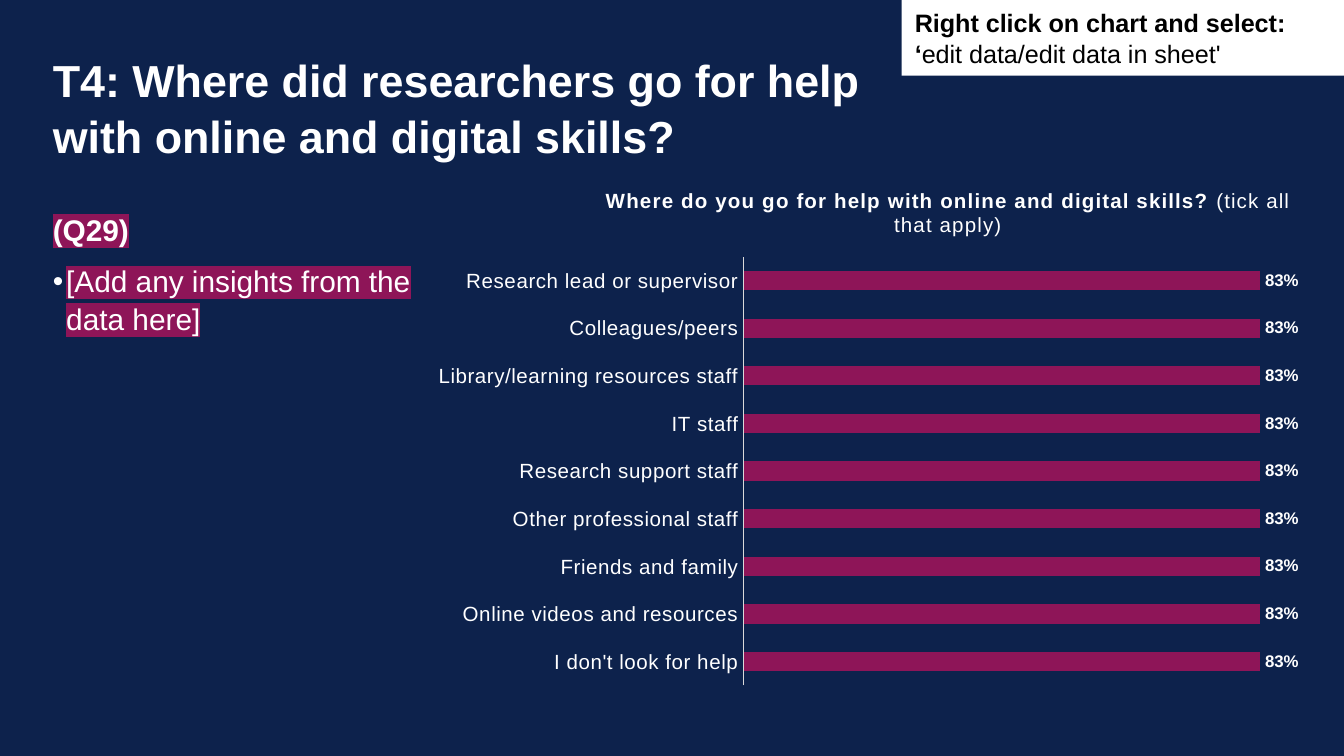
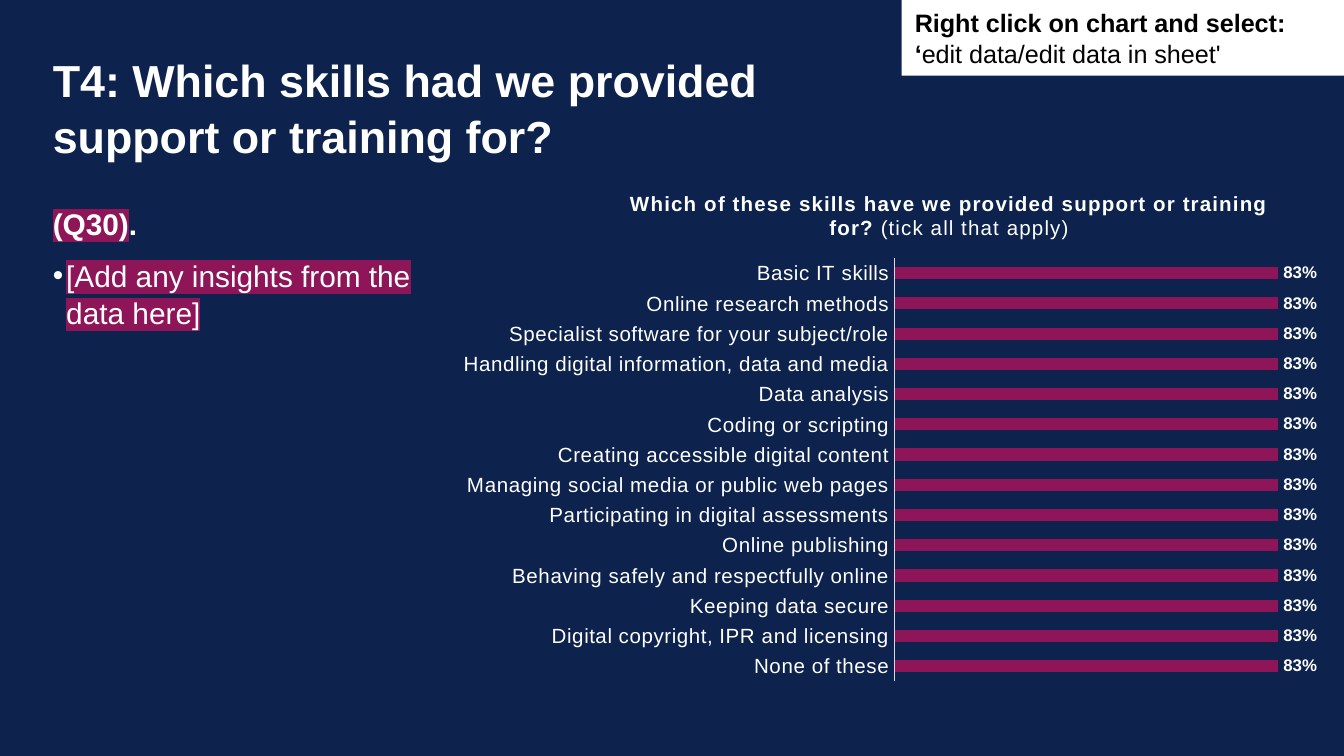
from dataclasses import dataclass

from lxml import etree
from pptx import Presentation
from pptx.chart.chart import Chart
from pptx.chart.data import CategoryChartData
from pptx.dml.color import RGBColor
from pptx.enum.chart import XL_CHART_TYPE, XL_LABEL_POSITION, XL_TICK_MARK
from pptx.enum.shapes import MSO_SHAPE
from pptx.enum.text import MSO_ANCHOR, MSO_AUTO_SIZE, PP_ALIGN
from pptx.oxml.ns import qn
from pptx.slide import Slide
from pptx.text.text import Font, TextFrame
from pptx.util import Pt

BAR = XL_CHART_TYPE.BAR_CLUSTERED
OUTSIDE = XL_LABEL_POSITION.OUTSIDE_END
NO_TICK = XL_TICK_MARK.NONE
RECT = MSO_SHAPE.RECTANGLE
TOP, MIDDLE = MSO_ANCHOR.TOP, MSO_ANCHOR.MIDDLE
LEFT = PP_ALIGN.LEFT
NO_FIT = MSO_AUTO_SIZE.NONE


@dataclass(frozen=True)
class Theme:
    font: str = "Arial"
    navy: RGBColor = RGBColor(0x0D, 0x22, 0x4C)
    plum: RGBColor = RGBColor(0x8E, 0x15, 0x58)
    white: RGBColor = RGBColor(0xFF, 0xFF, 0xFF)
    black: RGBColor = RGBColor(0x00, 0x00, 0x00)
    axis: RGBColor = RGBColor(0xD9, 0xD9, 0xD9)
    title: float = 24
    body: float = 16
    note: float = 13.5
    chart: float = 10
    chart_title: float = 11
    category: float = 11
    label: float = 9
    line_spacing: float = 1.05


@dataclass(frozen=True)
class Box:
    left: float
    top: float
    width: float
    height: float


@dataclass(frozen=True)
class Span:
    text: str
    bold: bool = False
    marked: bool = False


@dataclass(frozen=True)
class Question:
    title: list[str]
    title_box: Box
    heading: list[Span]
    body_box: Box
    chart_title: str
    chart_box: Box
    plot_area: Box
    categories: list[str]


T = Theme()
SLIDE_W, SLIDE_H = 720, 405
SHARE = 0.83
AXIS_MAX = 0.9
BULLET_INDENT = 7.2
NOTE_BOX = Box(483, 0, 237, 40.5)
NOTE = [
    Span("Right click on chart and select: ‘", bold=True),
    Span("edit data/edit data in sheet'"),
]
INSIGHTS = [Span("[Add any insights from the data here]", marked=True)]

QUESTIONS = [
    Question(
        title=["T4: Where did researchers go for help with online and digital skills?"],
        title_box=Box(28.3, 26.6, 442, 26.6),
        heading=[Span("(Q29)", True, True)],
        body_box=Box(28.3, 112.3, 203.8, 237.6),
        chart_title="Where do you go for help with online and digital skills?",
        chart_box=Box(231.8, 89.3, 476, 283.7),
        plot_area=Box(0.35, 0.17, 0.63, 0.81),
        categories=[
            "Research lead or supervisor",
            "Colleagues/peers",
            "Library/learning resources staff",
            "IT staff",
            "Research support staff",
            "Other professional staff",
            "Friends and family",
            "Online videos and resources",
            "I don't look for help",
        ],
    ),
    Question(
        title=["T4: Which skills had we provided", "support or training for?"],
        title_box=Box(28.3, 26.6, 513.4, 26.6),
        heading=[Span("(Q30)", True, True), Span(".", True)],
        body_box=Box(28.3, 109.4, 201.6, 237.6),
        chart_title="Which of these skills have we provided support or training for?",
        chart_box=Box(247, 90.7, 464.4, 280),
        plot_area=Box(0.5, 0.17, 0.48, 0.81),
        categories=[
            "Basic IT skills",
            "Online research methods",
            "Specialist software for your subject/role",
            "Handling digital information, data and media",
            "Data analysis",
            "Coding or scripting",
            "Creating accessible digital content",
            "Managing social media or public web pages",
            "Participating in digital assessments",
            "Online publishing",
            "Behaving safely and respectfully online",
            "Keeping data secure",
            "Digital copyright, IPR and licensing",
            "None of these",
        ],
    ),
]


def lengths(box: Box) -> tuple[Pt, Pt, Pt, Pt]:
    return Pt(box.left), Pt(box.top), Pt(box.width), Pt(box.height)


def style(font: Font, size: float, color: RGBColor, bold: bool = False) -> None:
    font.name = T.font
    font.size = Pt(size)
    font.bold = bold
    font.color.rgb = color


def add_run(p, span: Span, size: float, color: RGBColor):
    r = p.add_run()
    r.text = span.text
    style(r.font, size, color, span.bold)
    if span.marked:
        mark = etree.Element(qn("a:highlight"))
        etree.SubElement(mark, qn("a:srgbClr")).set("val", str(T.plum))
        r.font._element.find(qn("a:solidFill")).addnext(mark)
    return r


def set_bullet(p, char: str = "") -> None:
    pPr = p._p.get_or_add_pPr()
    indent = Pt(BULLET_INDENT) if char else 0
    pPr.set("marL", str(indent))
    pPr.set("indent", str(-indent))
    if char:
        etree.SubElement(pPr, qn("a:buChar")).set("char", char)
    else:
        etree.SubElement(pPr, qn("a:buNone"))


def place(sp, box: Box) -> TextFrame:
    sp.left, sp.top, sp.width, sp.height = lengths(box)
    tf = sp.text_frame
    tf.word_wrap = True
    tf.auto_size = NO_FIT
    tf.vertical_anchor = TOP
    tf.margin_left = tf.margin_right = tf.margin_top = tf.margin_bottom = 0
    return tf


def add_title(s: Slide, lines: list[str], box: Box) -> None:
    p = place(s.shapes.title, box).paragraphs[0]
    p.alignment = LEFT
    p.line_spacing = T.line_spacing
    for i, line in enumerate(lines):
        if i:
            p.add_line_break()
        add_run(p, Span(line, bold=True), T.title, T.white)


def add_body(s: Slide, heading: list[Span], box: Box) -> None:
    tf = place(s.placeholders[1], box)
    rows = [(tf.paragraphs[0], heading, "", 0), (tf.add_paragraph(), INSIGHTS, "•", 7.5)]
    for p, spans, bullet, before in rows:
        set_bullet(p, bullet)
        p.line_spacing = T.line_spacing
        p.space_before = Pt(before)
        for span in spans:
            add_run(p, span, T.body, T.white)


def set_layout(parent, index: int, **fractions: float) -> None:
    for old in parent.findall(qn("c:layout")):
        parent.remove(old)
    layout = etree.Element(qn("c:layout"))
    manual = etree.SubElement(layout, qn("c:manualLayout"))
    if "w" in fractions:
        etree.SubElement(manual, qn("c:layoutTarget")).set("val", "inner")
    for axis in "xy":
        etree.SubElement(manual, qn(f"c:{axis}Mode")).set("val", "edge")
    for name, value in fractions.items():
        etree.SubElement(manual, qn(f"c:{name}")).set("val", str(value))
    parent.insert(index, layout)


def add_chart_title(chart: Chart, text: str) -> None:
    chart.has_title = True
    p = chart.chart_title.text_frame.paragraphs[0]
    for span in (Span(f"{text} ", bold=True), Span("(tick all that apply)")):
        r = add_run(p, span, T.chart_title, T.white)
        r.font._element.set("spc", "50")
    set_layout(chart._chartSpace.chart.find(qn("c:title")), 1, x=0.19, y=0.03)


def add_bars(s: Slide, q: Question) -> None:
    data = CategoryChartData(number_format="0%")
    data.categories = q.categories
    data.add_series("Series 1", [SHARE] * len(q.categories))
    chart = s.shapes.add_chart(BAR, *lengths(q.chart_box), data).chart
    style(chart.font, T.chart, T.black)
    chart.has_legend = False
    add_chart_title(chart, q.chart_title)

    area = q.plot_area
    set_layout(chart._chartSpace.chart.plotArea, 0,
               x=area.left, y=area.top, w=area.width, h=area.height)

    cat = chart.category_axis
    cat.reverse_order = True
    cat.major_tick_mark = cat.minor_tick_mark = NO_TICK
    cat.has_major_gridlines = False
    cat.format.line.color.rgb = T.axis
    cat.format.line.width = Pt(0.75)
    style(cat.tick_labels.font, T.category, T.white)
    cat.tick_labels.font._element.set("spc", "20")

    val = chart.value_axis
    val.minimum_scale, val.maximum_scale = 0, AXIS_MAX
    val.has_major_gridlines = False
    val.visible = False

    plot = chart.plots[0]
    plot.gap_width = 150
    plot.vary_by_categories = False
    fill = plot.series[0].format.fill
    fill.solid()
    fill.fore_color.rgb = T.plum
    plot.has_data_labels = True
    labels = plot.data_labels
    labels.show_value = True
    labels.number_format = "0%"
    labels.number_format_is_linked = False
    labels.position = OUTSIDE
    style(labels.font, T.label, T.white, bold=True)


def add_note(s: Slide) -> None:
    sp = s.shapes.add_shape(RECT, *lengths(NOTE_BOX))
    sp.shadow.inherit = False
    sp.fill.solid()
    sp.fill.fore_color.rgb = T.white
    sp.line.fill.background()
    tf = sp.text_frame
    tf.word_wrap = True
    tf.vertical_anchor = MIDDLE
    p = tf.paragraphs[0]
    p.alignment = LEFT
    for span in NOTE:
        add_run(p, span, T.note, T.black)


def main() -> None:
    prs = Presentation()
    prs.slide_width, prs.slide_height = Pt(SLIDE_W), Pt(SLIDE_H)
    fill = prs.slide_master.background.fill
    fill.solid()
    fill.fore_color.rgb = T.navy
    for q in QUESTIONS:
        s = prs.slides.add_slide(prs.slide_layouts[1])
        add_title(s, q.title, q.title_box)
        add_body(s, q.heading, q.body_box)
        add_bars(s, q)
        add_note(s)
    prs.save("out.pptx")


if __name__ == "__main__":
    main()
